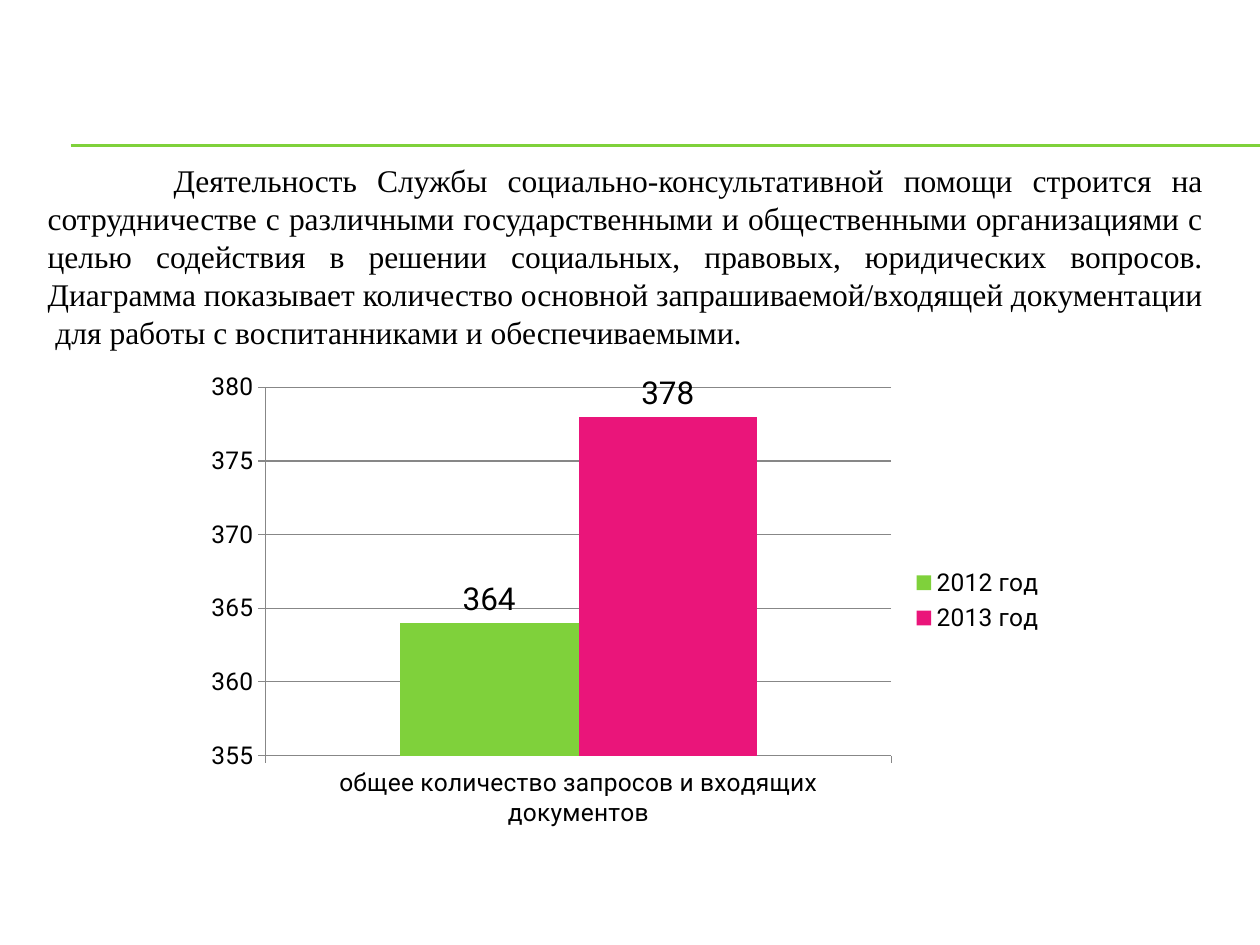
"""Build a slide with an introduction and a column chart of document requests."""
from dataclasses import dataclass

from lxml import etree
from pptx import Presentation
from pptx.chart.data import CategoryChartData
from pptx.dml.color import RGBColor
from pptx.enum import chart as ch, shapes, text
from pptx.oxml import ns
from pptx.util import Inches, Pt

GREEN, PINK, BLACK, GRAY = "7FD13B", "EA157A", "000000", "878787"
INTRO = (
    "Деятельность Службы социально-консультативной помощи строится на "
    "сотрудничестве с различными государственными и общественными организациями "
    "с целью содействия в решении социальных, правовых, юридических вопросов. "
    "Диаграмма показывает количество основной запрашиваемой/входящей "
    "документации  для работы с воспитанниками и обеспечиваемыми."
)
CATEGORY = "общее количество запросов и входящих документов"


@dataclass
class Year:
    name: str
    count: int
    color: str


YEARS = [Year("2012 год", 364, GREEN), Year("2013 год", 378, PINK)]


def rgb(color: str) -> RGBColor:
    return RGBColor.from_string(color)


def set_font(font, size: int, name: str) -> None:
    font.size = Pt(size)
    font.name = name
    font.color.rgb = rgb(BLACK)


def add_rule(s, y: float) -> None:
    line = s.shapes.add_connector(
        shapes.MSO_CONNECTOR.STRAIGHT, Inches(0.56), Inches(y), Inches(10), Inches(y))
    line.line.color.rgb = rgb(GREEN)
    line.line.width = Pt(0.75)
    etree.SubElement(line._element.spPr, ns.qn("a:effectLst"))


def add_intro(s) -> None:
    sp = s.shapes.add_textbox(Inches(0.28), Inches(1.22), Inches(9.37), Inches(1.62))
    tf = sp.text_frame
    tf.word_wrap = True
    tf.auto_size = text.MSO_AUTO_SIZE.SHAPE_TO_FIT_TEXT
    tf.vertical_anchor = text.MSO_ANCHOR.MIDDLE
    p = tf.paragraphs[0]
    p.alignment = text.PP_ALIGN.JUSTIFY
    p._p.get_or_add_pPr().set("indent", str(Inches(1)))
    r = p.add_run()
    r.text = INTRO
    set_font(r.font, 18, "Times New Roman")


def style_axis(axis) -> None:
    axis.major_tick_mark = ch.XL_TICK_MARK.OUTSIDE
    axis.minor_tick_mark = ch.XL_TICK_MARK.NONE
    axis.format.line.color.rgb = rgb(GRAY)
    set_font(axis.tick_labels.font, 14, "Roboto")


def add_requests_chart(s, years: list[Year]) -> None:
    data = CategoryChartData()
    data.categories = [CATEGORY]
    for year in years:
        data.add_series(year.name, [year.count])
    chart = s.shapes.add_chart(
        ch.XL_CHART_TYPE.COLUMN_CLUSTERED,
        Inches(1.54), Inches(2.88), Inches(6.85), Inches(3.77), data).chart
    set_font(chart.font, 18, "Roboto")
    chart.has_title = False
    chart.has_legend = True
    chart.legend.position = ch.XL_LEGEND_POSITION.RIGHT
    chart.legend.include_in_layout = False
    set_font(chart.legend.font, 14, "Roboto")
    style_axis(chart.category_axis)
    style_axis(chart.value_axis)
    chart.value_axis.minimum_scale = 355
    chart.value_axis.maximum_scale = 380
    chart.value_axis.major_unit = 5
    chart.value_axis.major_gridlines.format.line.color.rgb = rgb(GRAY)
    plot = chart.plots[0]
    plot.gap_width = 150
    plot.overlap = 0
    plot.vary_by_categories = False
    for series, year in zip(plot.series, years):
        series.format.fill.solid()
        series.format.fill.fore_color.rgb = rgb(year.color)
        labels = series.data_labels
        labels.show_value = True
        labels.position = ch.XL_LABEL_POSITION.OUTSIDE_END
        set_font(labels.font, 18, "Roboto")


def main() -> None:
    prs = Presentation()
    prs.slide_width, prs.slide_height = Inches(10), Inches(7.5)
    s = prs.slides.add_slide(prs.slide_layouts[6])
    for y in (1.15, 1.16):
        add_rule(s, y)
    add_requests_chart(s, YEARS)
    add_intro(s)
    prs.save("out.pptx")


if __name__ == "__main__":
    main()
